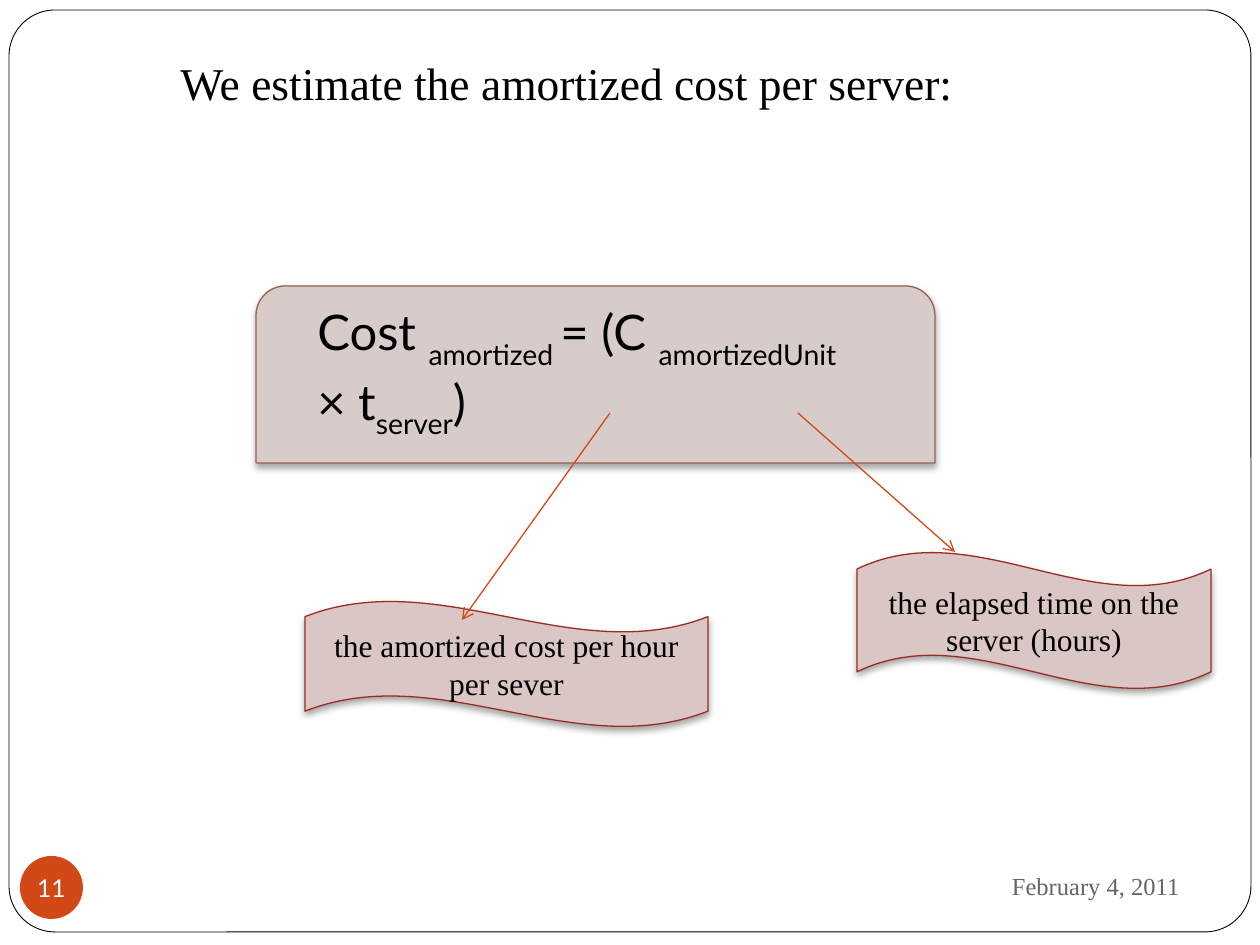
import pptx
import pptx.dml.color
import pptx.enum.shapes
import pptx.enum.text
import pptx.oxml
import pptx.oxml.ns
import pptx.util

SCALE = 914400 / 126
COLORS = {
    "ink": "000000", "page": "FFFFFF", "box": "D8CCCA", "edge": "956251",
    "wave": "D9C6C5", "rim": "9B2D1F", "accent": "D34817", "date": "696464",
}
SERIF = "Times New Roman"
SANS = "Lato"
SHAPE = pptx.enum.shapes.MSO_SHAPE
ALIGN = pptx.enum.text.PP_ALIGN
ANCHOR = pptx.enum.text.MSO_ANCHOR


def px(*nums):
    """Turn pixel lengths into EMU."""
    return [round(num * SCALE) for num in nums]


def color(name):
    """Look up a named colour."""
    return pptx.dml.color.RGBColor.from_string(COLORS[name])


def node(xml):
    """Parse a drawing element."""
    return pptx.oxml.parse_xml(xml.replace(">", f" {pptx.oxml.ns.nsdecls('a')}>", 1))


def write(frame, parts, size, font=SERIF, ink="ink", align=ALIGN.LEFT,
          anchor=ANCHOR.MIDDLE, wrap=True, before=0):
    """Fill a frame with (text, baseline) parts, or with one plain string."""
    frame.word_wrap = wrap
    frame.vertical_anchor = anchor
    para = frame.paragraphs[0]
    para.alignment = align
    para.space_before = pptx.util.Pt(before)
    for words, base in [(parts, 0)] if isinstance(parts, str) else parts:
        run = para.add_run()
        run.text = words
        run.font.size = pptx.util.Pt(size)
        run.font.name = font
        run.font.color.rgb = color(ink)
        if base:
            run.font._element.set("baseline", str(base * 1000))


def label(slide, area, parts, size, **style):
    """Add a text box."""
    frame = slide.shapes.add_textbox(*px(*area)).text_frame
    write(frame, parts, size, **style)
    return frame


def block(slide, kind, area, fill, line=None, width=0.75, shadow=False):
    """Add a filled preset shape."""
    shape = slide.shapes.add_shape(kind, *px(*area))
    shape.fill.solid()
    shape.fill.fore_color.rgb = color(fill)
    if line:
        shape.line.color.rgb = color(line)
        shape.line.width = pptx.util.Pt(width)
    else:
        shape.line.fill.background()
    shape.shadow.inherit = False
    if shadow:
        effects = shape._element.spPr.find(pptx.oxml.ns.qn("a:effectLst"))
        effects.append(node(
            '<a:outerShdw blurRad="50800" dist="25400" dir="5400000" rotWithShape="0">'
            '<a:srgbClr val="000000"><a:alpha val="35000"/></a:srgbClr></a:outerShdw>'))
    return shape


def arrow(slide, start, end):
    """Add a thin arrow from start to end."""
    kind = pptx.enum.shapes.MSO_CONNECTOR.STRAIGHT
    line = slide.shapes.add_connector(kind, *px(*start, *end))
    line.line.color.rgb = color("accent")
    line.line.width = pptx.util.Pt(0.75)
    line.line._get_or_add_ln().append(node('<a:tailEnd type="arrow"></a:tailEnd>'))
    line._element.spPr.append(node("<a:effectLst></a:effectLst>"))


def main():
    """Build and save the slide."""
    deck = pptx.Presentation()
    deck.slide_width, deck.slide_height = px(1260, 945)
    slide = deck.slides.add_slide(deck.slide_layouts[6])

    border = block(slide, SHAPE.ROUNDED_RECTANGLE, (9, 10, 1242, 922), "page", "ink", 0.5)
    border.adjustments[0] = 0.05
    label(slide, (168, 49, 1033, 662), "We estimate the amortized cost per server:",
          26, anchor=ANCHOR.TOP, before=5.8)

    block(slide, SHAPE.ROUND_2_SAME_RECTANGLE, (256, 286, 679, 177),
          "box", "edge", shadow=True)
    formula = [("Cost ", 0), ("amortized ", -30), ("= (C ", 0), ("amortizedUnit ", -30),
               ("× t", 0), ("server", -30), (")", 0)]
    label(slide, (305, 335, 556, 72), formula, 28, font=SANS)

    notes = [((305, 601, 403, 126), "the amortized cost per hour per sever"),
             ((857, 552, 354, 137), "the elapsed time on the server (hours)")]
    for area, words in notes:
        wave = block(slide, SHAPE.WAVE, area, "wave", "rim", shadow=True)
        write(wave.text_frame, words, 18, align=ALIGN.CENTER)
    arrow(slide, (610, 413), (462, 620))
    arrow(slide, (798, 413), (955, 552))

    label(slide, (850, 853, 342, 66), "February 4, 2011", 14, ink="date", align=ALIGN.RIGHT)
    badge = block(slide, SHAPE.OVAL, (20, 856, 63, 63), "accent")
    frame = badge.text_frame
    frame.margin_left = frame.margin_right = frame.margin_top = frame.margin_bottom = 0
    write(frame, "11", 14, font=SANS, ink="page", align=ALIGN.CENTER, wrap=False)
    deck.save("out.pptx")


if __name__ == "__main__":
    main()
